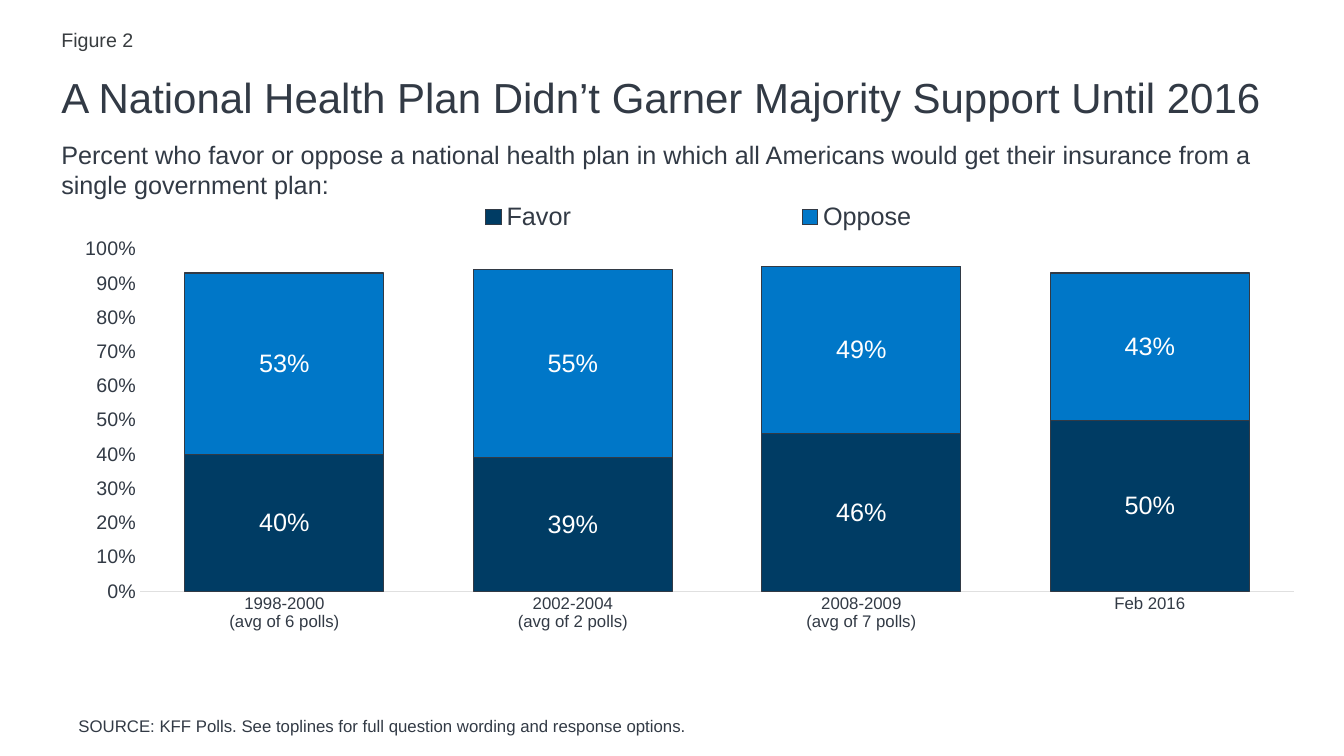
from dataclasses import dataclass

from lxml.etree import SubElement
from pptx import Presentation
from pptx.chart.data import CategoryChartData
from pptx.dml.color import RGBColor
from pptx.enum.chart import XL_CHART_TYPE, XL_LABEL_POSITION, XL_LEGEND_POSITION, XL_TICK_MARK
from pptx.enum.text import MSO_ANCHOR
from pptx.oxml.ns import qn
from pptx.util import Inches, Pt


@dataclass(frozen=True)
class Theme:
    font: str = "Arial"
    ink: str = "323A45"
    label_ink: str = "393D40"
    white: str = "FFFFFF"
    axis_line: str = "E0E0E0"
    favor: str = "003C64"
    oppose: str = "0077C8"
    title: int = 30
    body: int = 18
    small: int = 14
    note: int = 12
    line: float = 0.75


THEME = Theme()

PERIODS = [
    "1998-2000\n(avg of 6 polls)",
    "2002-2004\n(avg of 2 polls)",
    "2008-2009\n(avg of 7 polls)",
    "Feb 2016",
]
OPINIONS = [
    ("Favor", (0.40, 0.39, 0.46, 0.50), THEME.favor),
    ("Oppose", (0.53, 0.55, 0.49, 0.43), THEME.oppose),
]


def style_font(font, size, color):
    font.name = THEME.font
    font.size = Pt(size)
    font.color.rgb = RGBColor.from_string(color)


def style_line(line, color):
    line.color.rgb = RGBColor.from_string(color)
    line.width = Pt(THEME.line)


def add_text(slide, place, text, size, color=THEME.ink, anchor=MSO_ANCHOR.TOP, margin_top=0.05):
    frame = slide.shapes.add_textbox(*map(Inches, place)).text_frame
    frame.word_wrap = True
    frame.vertical_anchor = anchor
    frame.margin_top = Inches(margin_top)
    run = frame.paragraphs[0].add_run()
    run.text = text
    style_font(run.font, size, color)


def set_layout(parent, index, x, y, width, height, inner=False):
    """Place a chart part by fractions of the chart's size."""
    for old_layout in parent.findall(qn("c:layout")):
        parent.remove(old_layout)
    layout = SubElement(parent, qn("c:layout"))
    parent.insert(index, layout)
    manual = SubElement(layout, qn("c:manualLayout"))
    settings = [("layoutTarget", "inner")] if inner else []
    settings += [("xMode", "edge"), ("yMode", "edge"), ("x", x), ("y", y), ("w", width), ("h", height)]
    for tag, value in settings:
        SubElement(manual, qn(f"c:{tag}")).set("val", str(value))


def style_axes(chart):
    periods, shares = chart.category_axis, chart.value_axis
    for axis, size in ((periods, THEME.note), (shares, THEME.small)):
        axis.major_tick_mark = axis.minor_tick_mark = XL_TICK_MARK.NONE
        axis.has_major_gridlines = False
        style_font(axis.tick_labels.font, size, THEME.ink)
    style_line(periods.format.line, THEME.axis_line)
    shares.format.line.fill.background()
    shares.minimum_scale, shares.maximum_scale, shares.major_unit = 0, 1, 0.1
    shares.tick_labels.number_format = "0%"
    shares.tick_labels.number_format_is_linked = False


def style_opinion(opinion, color):
    opinion.format.fill.solid()
    opinion.format.fill.fore_color.rgb = RGBColor.from_string(color)
    style_line(opinion.format.line, THEME.ink)
    labels = opinion.data_labels
    labels.show_value = True
    labels.number_format = "0%"
    labels.number_format_is_linked = False
    labels.position = XL_LABEL_POSITION.CENTER
    style_font(labels.font, THEME.body, THEME.white)


def add_poll_chart(slide, place):
    polls = CategoryChartData(number_format="0%")
    polls.categories = PERIODS
    for name, shares, _ in OPINIONS:
        polls.add_series(name, shares)
    chart = slide.shapes.add_chart(
        XL_CHART_TYPE.COLUMN_STACKED, *map(Inches, place), polls
    ).chart
    chart.has_title = False
    style_font(chart.font, THEME.note, THEME.ink)
    style_axes(chart)

    # Stacked columns
    columns = chart.plots[0]
    columns.gap_width, columns.overlap = 45, 100
    columns.vary_by_categories = False
    for opinion, (_, _, color) in zip(columns.series, OPINIONS):
        style_opinion(opinion, color)

    # Legend above the plot
    chart.has_legend = True
    legend = chart.legend
    legend.position = XL_LEGEND_POSITION.BOTTOM
    legend.include_in_layout = False
    style_font(legend.font, THEME.body, THEME.ink)
    plot_area = chart.element.find(".//" + qn("c:plotArea"))
    legend_part = chart.element.find(".//" + qn("c:legend"))
    set_layout(plot_area, 0, 0.06, 0.11, 0.94, 0.69, inner=True)
    set_layout(legend_part, 1, 0.16, 0.01, 0.71, 0.07)


def main():
    deck = Presentation()
    deck.slide_width, deck.slide_height = Inches(13.33), Inches(7.5)
    slide = deck.slides.add_slide(deck.slide_layouts[6])

    # Heading
    add_text(slide, (0.51, 0.23, 3.11, 0.4), "Figure 2", THEME.small, THEME.label_ink)
    add_text(slide, (0.51, 0.64, 12.5, 0.92),
             "A National Health Plan Didn’t Garner Majority Support Until 2016",
             THEME.title, margin_top=0.07)
    add_text(slide, (0.51, 1.33, 12.33, 0.71),
             "Percent who favor or oppose a national health plan in which all Americans "
             "would get their insurance from a single government plan:", THEME.body)

    # Poll results
    add_poll_chart(slide, (0.66, 1.93, 12.18, 4.92))

    # Source note
    add_text(slide, (0.68, 6.6, 10.04, 0.75),
             "SOURCE: KFF Polls. See toplines for full question wording and response options.",
             THEME.note, anchor=MSO_ANCHOR.BOTTOM)

    deck.save("out.pptx")


if __name__ == "__main__":
    main()
